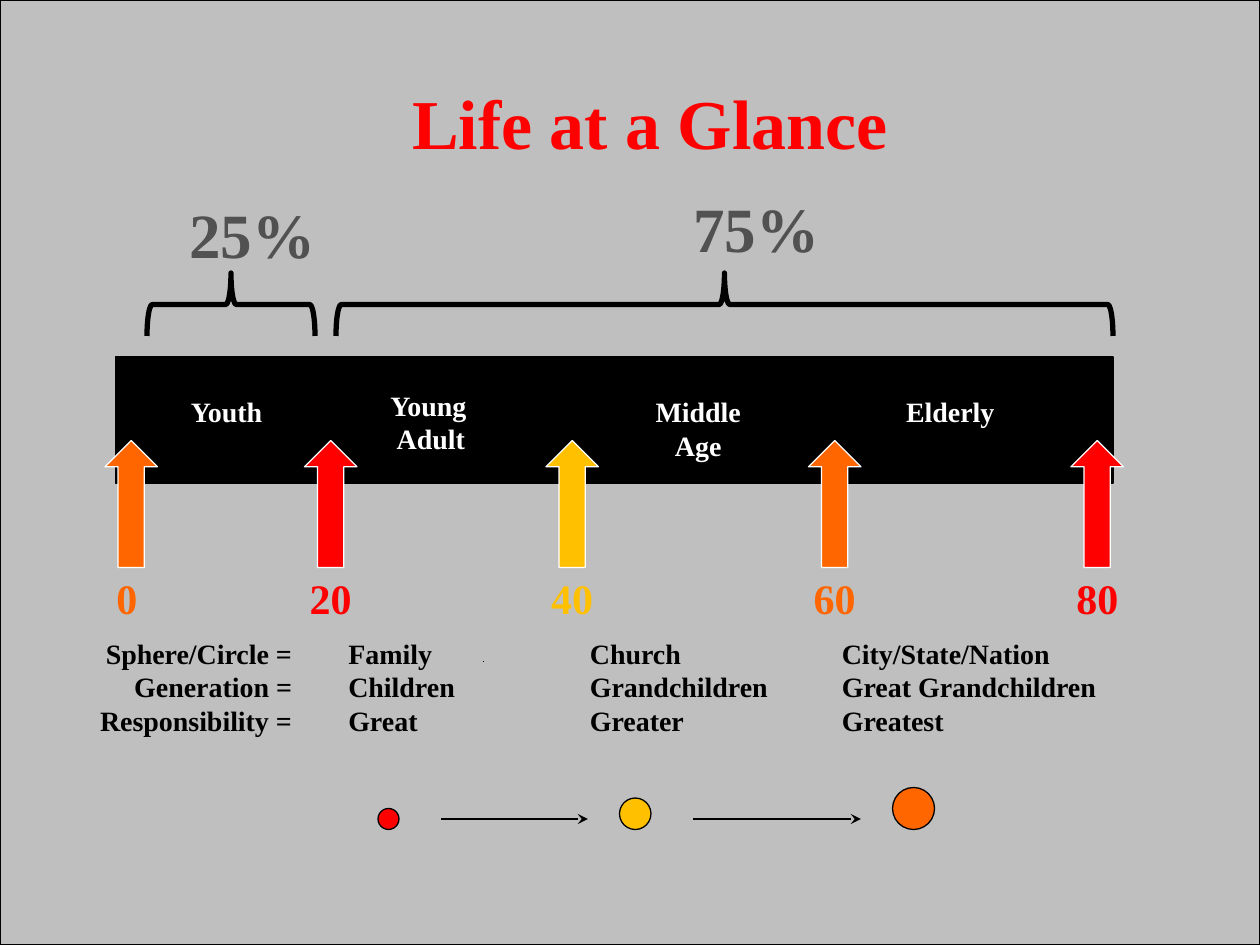
from dataclasses import dataclass

from lxml import etree
from pptx import Presentation
from pptx import util as u
from pptx.dml.color import RGBColor
from pptx.enum import shapes, text
from pptx.oxml.ns import qn

# The slide is a grid of 120 columns by 90 rows
COLUMNS, ROWS = 120, 90
SLIDE_WIDTH, SLIDE_HEIGHT = u.Inches(10), u.Inches(7.5)

BLACK = RGBColor(0x00, 0x00, 0x00)
WHITE = RGBColor(0xFF, 0xFF, 0xFF)
SILVER = RGBColor(0xBF, 0xBF, 0xBF)
GRAY = RGBColor(0x51, 0x51, 0x51)
RED = RGBColor(0xFF, 0x00, 0x00)
GOLD = RGBColor(0xFF, 0xC0, 0x00)
ORANGE = RGBColor(0xFF, 0x66, 0x00)

LEFT, CENTER, RIGHT = text.PP_ALIGN.LEFT, text.PP_ALIGN.CENTER, text.PP_ALIGN.RIGHT
SHAPE = shapes.MSO_SHAPE


@dataclass
class Label:
    wording: str
    column: float
    row: float
    columns: float
    rows: float
    size: int = 16
    color: RGBColor = BLACK
    align: text.PP_ALIGN = LEFT
    indents: tuple = ()  # left margin of each paragraph, in columns


@dataclass
class Milestone:
    age: str
    column: float
    color: RGBColor
    align: text.PP_ALIGN = CENTER
    indents: tuple = ()


@dataclass
class Sphere:
    column: float
    diameter: float
    color: RGBColor


@dataclass
class Brace:
    start: float
    end: float


MILESTONES = [
    Milestone("0", 12.5, ORANGE, LEFT, (1.9,)),
    Milestone("20", 31.5, RED),
    Milestone("40", 54.5, GOLD),
    Milestone("60", 79.5, ORANGE),
    Milestone("80", 104.5, RED),
]
STAGES = [
    Label("Youth", 17, 37, 11, 4.4, color=WHITE),
    Label("Young\nAdult", 36, 36.4, 11, 7.7, color=WHITE, indents=(0, 0.6)),
    Label("Middle Age", 61, 37, 11, 7.7, color=WHITE, align=CENTER),
    Label("Elderly", 82, 37, 17, 4.4, color=WHITE, align=CENTER),
]
SHARES = [
    Label("25%", 13, 18, 22, 8.5, 36, GRAY, CENTER),
    Label("75%", 61, 17.5, 22, 8.5, 36, GRAY, CENTER),
]
DETAILS = [
    Label("Sphere/Circle =\nGeneration =\nResponsibility =", -2, 60, 31, 11, align=RIGHT),
    Label("Family\nChildren\nGreat", 32, 60, 18, 11),
    Label("Church\nGrandchildren\nGreater", 55, 60, 22, 11),
    Label("City/State/Nation\nGreat Grandchildren\nGreatest", 79, 60, 35, 11),
]
BRACES = [Brace(14, 30), Brace(32, 106)]
SPHERES = [Sphere(36, 2, RED), Sphere(59, 3, GOLD), Sphere(85, 4, ORANGE)]
GROWTH_ARROWS = [(42, 56), (66, 82)]
SPHERE_BASE, GROWTH_ROW = 79, 78


def across(columns: float) -> int:
    return round(SLIDE_WIDTH * columns / COLUMNS)


def down(rows: float) -> int:
    return round(SLIDE_HEIGHT * rows / ROWS)


def box(column: float, row: float, columns: float, rows: float) -> tuple:
    return across(column), down(row), across(columns), down(rows)


def write(frame, label: Label) -> None:
    """Fill a text frame with one paragraph per line of the label."""
    frame_format = {
        "word_wrap": True,
        "auto_size": text.MSO_AUTO_SIZE.NONE,
        "vertical_anchor": text.MSO_ANCHOR.TOP,
    }
    for name, value in frame_format.items():
        setattr(frame, name, value)
    frame.text = label.wording
    font_format = {"name": "Times New Roman", "size": u.Pt(label.size), "bold": True}
    for paragraph in frame.paragraphs:
        paragraph.alignment = label.align
        for name, value in font_format.items():
            setattr(paragraph.font, name, value)
            setattr(paragraph.runs[0].font, name, value)
        paragraph.runs[0].font.color.rgb = label.color
    for paragraph, indent in zip(frame.paragraphs, label.indents):
        paragraph._p.get_or_add_pPr().set("marL", str(across(indent)))


def add_label(slide, label: Label) -> None:
    area = box(label.column, label.row, label.columns, label.rows)
    write(slide.shapes.add_textbox(*area).text_frame, label)


def add_figure(slide, kind, area: tuple, fill=None, line=BLACK, width=0.75, rotation=0):
    figure = slide.shapes.add_shape(kind, *area)
    figure.shadow.inherit = False
    figure.rotation = rotation
    if fill is None:
        figure.fill.background()
    else:
        figure.fill.solid()
        figure.fill.fore_color.rgb = fill
    figure.line.color.rgb = line
    figure.line.width = u.Pt(width)
    return figure


def add_upturned(slide, kind, middle: tuple, length: float, breadth: float, **look) -> None:
    """Place a right-facing shape around its middle and turn it upwards."""
    column, row = middle
    area = box(column - length / 2, row - breadth / 2, length, breadth)
    add_figure(slide, kind, area, rotation=270, **look)


def add_line(slide, start: float, end: float, row: float, arrow: bool = False) -> None:
    line = slide.shapes.add_connector(
        shapes.MSO_CONNECTOR.STRAIGHT, across(start), down(row), across(end), down(row))
    line.line.color.rgb = BLACK
    line.line.width = u.Pt(0.75)
    if arrow:
        etree.SubElement(line.line._get_or_add_ln(), qn("a:tailEnd"), type="stealth")
    etree.SubElement(line._element.spPr, qn("a:effectLst"))


def main() -> None:
    deck = Presentation()
    deck.slide_width, deck.slide_height = SLIDE_WIDTH, SLIDE_HEIGHT
    slide = deck.slides.add_slide(deck.slide_layouts[5])

    # Backdrop, sent behind the title
    backdrop = add_figure(slide, SHAPE.RECTANGLE, box(0, 0, COLUMNS, ROWS), SILVER)
    slide.shapes._spTree.insert(2, backdrop._element)

    # Title
    heading = Label("Life at a Glance", 35.8, 7, 52.2, 9.2, 40, RED, CENTER)
    title = slide.shapes.title
    title.left, title.top, title.width, title.height = box(
        heading.column, heading.row, heading.columns, heading.rows)
    write(title.text_frame, heading)

    # Life bar with its stages, shares and details
    add_figure(slide, SHAPE.RECTANGLE, box(11, 34, 95, 12), BLACK)
    for label in STAGES + SHARES + DETAILS:
        add_label(slide, label)
    for brace in BRACES:
        middle = ((brace.start + brace.end) / 2, 29)
        add_upturned(slide, SHAPE.RIGHT_BRACE, middle, 6, brace.end - brace.start, width=3)

    # Ages along the bar
    for stone in MILESTONES:
        add_upturned(slide, SHAPE.RIGHT_ARROW, (stone.column, 48), 12.1, 5,
                     fill=stone.color, line=WHITE)
        add_label(slide, Label(stone.age, stone.column - 4.5, 53.9, 9, 6.1, 24,
                               stone.color, stone.align, stone.indents))

    # Growing spheres
    for sphere in SPHERES:
        area = box(sphere.column, SPHERE_BASE - sphere.diameter, sphere.diameter, sphere.diameter)
        add_figure(slide, SHAPE.OVAL, area, sphere.color)
    for start, end in GROWTH_ARROWS:
        add_line(slide, start, end, GROWTH_ROW, arrow=True)

    # Small mark beside the family column
    add_line(slide, 46, 46.1, 63)

    deck.save("out.pptx")


if __name__ == "__main__":
    main()
